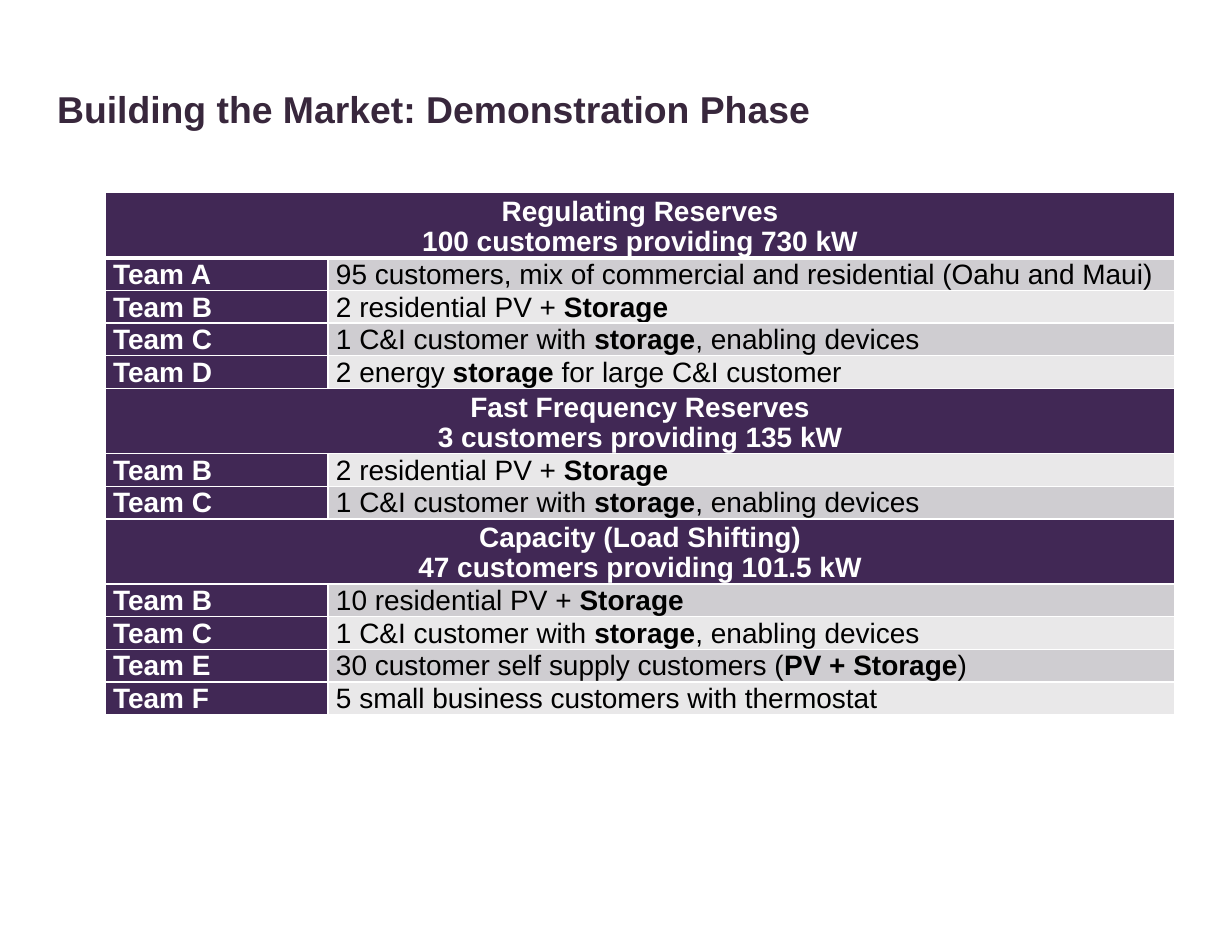
from dataclasses import dataclass

from lxml.etree import SubElement
from pptx import Presentation
from pptx.dml.color import RGBColor
from pptx.enum.text import MSO_ANCHOR as Anchor, PP_ALIGN as Align
from pptx.oxml.ns import qn
from pptx.slide import Slide
from pptx.table import Table, _Cell as Cell
from pptx.util import Inches, Pt

PLUM = RGBColor(0x41, 0x28, 0x55)
TITLE_INK = RGBColor(0x38, 0x27, 0x3C)
WHITE = RGBColor(0xFF, 0xFF, 0xFF)
BLACK = RGBColor(0x00, 0x00, 0x00)
DARK_BAND = RGBColor(0xCF, 0xCD, 0xD1)
LIGHT_BAND = RGBColor(0xE9, 0xE8, 0xE9)

FONT = "Arial"
LINE_HEIGHT = 0.28
COLUMN_WIDTHS = (1.99, 7.56)
THIN, THICK = 1, 3


@dataclass(frozen=True)
class Entry:
    team: str
    offer: str
    stress: str = ""


@dataclass(frozen=True)
class Service:
    name: str
    total: str
    entries: tuple[Entry, ...]


TEAM_B = Entry("Team B", "2 residential PV + Storage", "Storage")
TEAM_C = Entry("Team C", "1 C&I customer with storage, enabling devices", "storage")
SERVICES = (
    Service("Regulating Reserves", "100 customers providing 730 kW", (
        Entry("Team A", "95 customers, mix of commercial and residential (Oahu and Maui)"),
        TEAM_B,
        TEAM_C,
        Entry("Team D", "2 energy storage for large C&I customer", "storage"),
    )),
    Service("Fast Frequency Reserves", "3 customers providing 135 kW", (TEAM_B, TEAM_C)),
    Service("Capacity (Load Shifting)", "47 customers providing 101.5 kW", (
        Entry("Team B", "10 residential PV + Storage", "Storage"),
        TEAM_C,
        Entry("Team E", "30 customer self supply customers (PV + Storage)", "PV + Storage"),
        Entry("Team F", "5 small business customers with thermostat"),
    )),
)


def draw_borders(cell: Cell, top: float, bottom: float) -> None:
    """Give a cell white borders, placed ahead of its fill."""
    properties = cell._tc.get_or_add_tcPr()
    widths = {"lnL": THIN, "lnR": THIN, "lnT": top, "lnB": bottom}
    for position, (side, width) in enumerate(widths.items()):
        border = SubElement(properties, qn(f"a:{side}"), w=str(Pt(width)))
        fill = SubElement(border, qn("a:solidFill"))
        SubElement(fill, qn("a:srgbClr"), val=str(WHITE))
        properties.insert(position, border)


def style_cell(cell: Cell, row: int, fill: RGBColor) -> None:
    """Set the fill, margins, anchor and borders of a cell."""
    cell.fill.solid()
    cell.fill.fore_color.rgb = fill
    cell.margin_left = cell.margin_right = Inches(0.07)
    cell.margin_top = cell.margin_bottom = 0
    cell.vertical_anchor = Anchor.BOTTOM
    draw_borders(cell, THICK if row == 1 else THIN, THICK if row == 0 else THIN)


def write_cell(cell: Cell, text: str, color: RGBColor, bold: bool,
               align: Align = Align.LEFT, stress: str = "") -> None:
    """Write the lines of a cell, with the stressed words in bold."""
    cell.text_frame.text = "" if stress else text
    if stress:
        before, found, after = text.partition(stress)
        for part in filter(None, (before, found, after)):
            cell.text_frame.paragraphs[0].add_run().text = part
    for paragraph in cell.text_frame.paragraphs:
        paragraph.alignment = align
        paragraph.line_spacing = 0.97
        for run in paragraph.runs:
            run.font.name = FONT
            run.font.size = Pt(18)
            run.font.color.rgb = color
            run.font.bold = bold or run.text == stress


def draw_heading(table: Table, row: int, service: Service) -> None:
    """Draw the two-line heading that spans the table."""
    heading, spanned = table.cell(row, 0), table.cell(row, 1)
    for cell in (heading, spanned):
        style_cell(cell, row, PLUM)
    heading.merge(spanned)
    write_cell(heading, f"{service.name}\n{service.total}", WHITE, True, Align.CENTER)
    table.rows[row].height = Inches(2 * LINE_HEIGHT)


def draw_entry(table: Table, row: int, entry: Entry) -> None:
    """Draw a team and its offer on a banded row."""
    team, offer = table.cell(row, 0), table.cell(row, 1)
    style_cell(team, row, PLUM)
    write_cell(team, entry.team, WHITE, True)
    style_cell(offer, row, DARK_BAND if row % 2 else LIGHT_BAND)
    write_cell(offer, entry.offer, BLACK, False, stress=entry.stress)
    table.rows[row].height = Inches(LINE_HEIGHT)


def draw_services(slide: Slide) -> None:
    """Draw the table of grid services."""
    lines = [line for service in SERVICES for line in (service, *service.entries)]
    frame = slide.shapes.add_table(
        len(lines), len(COLUMN_WIDTHS), Inches(0.94), Inches(1.72),
        Inches(sum(COLUMN_WIDTHS)), Inches(LINE_HEIGHT * len(lines)))
    table = frame.table
    for column, width in zip(table.columns, COLUMN_WIDTHS):
        column.width = Inches(width)
    for row, line in enumerate(lines):
        draw = draw_heading if isinstance(line, Service) else draw_entry
        draw(table, row, line)


def draw_title(slide: Slide) -> None:
    """Draw the slide title."""
    title = slide.shapes.add_textbox(Inches(0.51), Inches(0.2), Inches(9.99), Inches(1.03))
    frame = title.text_frame
    frame.word_wrap = True
    frame.vertical_anchor = Anchor.BOTTOM
    frame.margin_left = frame.margin_right = 0
    frame.margin_top = frame.margin_bottom = Inches(0.06)
    frame.text = "Building the Market: Demonstration Phase"
    font = frame.paragraphs[0].runs[0].font
    font.name, font.size, font.bold = FONT, Pt(24), True
    font.color.rgb = TITLE_INK


def main() -> None:
    """Build and save the slide."""
    deck = Presentation()
    deck.slide_width, deck.slide_height = Inches(11), Inches(8.5)
    slide = deck.slides.add_slide(deck.slide_layouts[6])
    draw_title(slide)
    draw_services(slide)
    deck.save("out.pptx")


if __name__ == "__main__":
    main()
